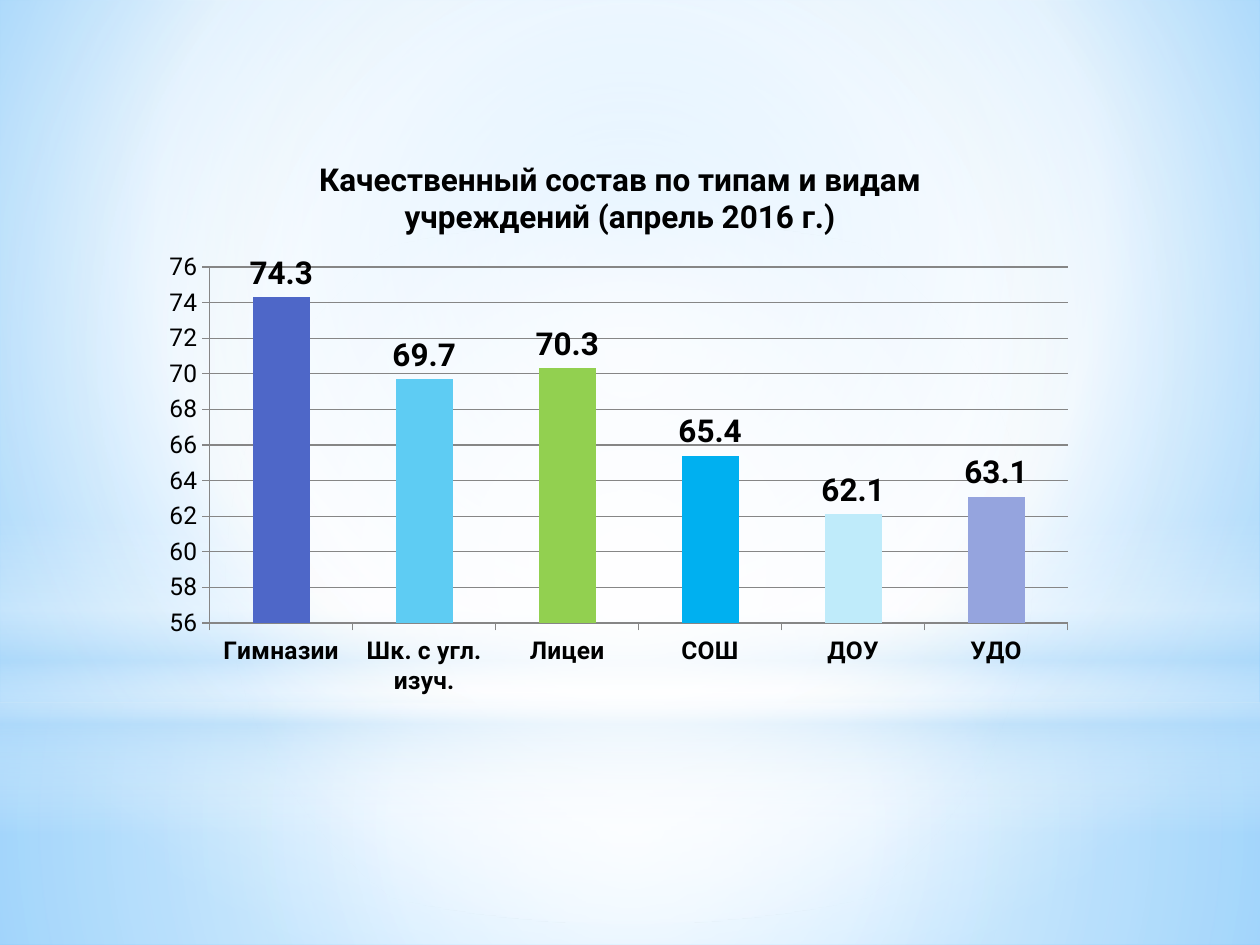
from lxml import etree
from pptx import Presentation
from pptx.chart.data import CategoryChartData
from pptx.dml.color import RGBColor
from pptx.enum.chart import XL_CHART_TYPE, XL_LABEL_POSITION, XL_TICK_MARK
from pptx.enum.shapes import MSO_SHAPE
from pptx.oxml import parse_xml
from pptx.oxml.ns import nsdecls, qn
from pptx.util import Cm, Pt

BLACK = RGBColor(0x00, 0x00, 0x00)
GRAY = RGBColor(0x86, 0x86, 0x86)
WHITE = RGBColor(0xFF, 0xFF, 0xFF)
PALE_BLUE = RGBColor(0xB4, 0xDC, 0xFA)
LIGHT_SKY = RGBColor(0x9E, 0xD5, 0xFF)
SKY = RGBColor(0x5B, 0xB9, 0xFF)
INDIGO = RGBColor(0x4E, 0x67, 0xC8)
CYAN = RGBColor(0x5E, 0xCC, 0xF3)
GREEN = RGBColor(0x92, 0xD0, 0x50)
AZURE = RGBColor(0x00, 0xB0, 0xF0)
ICE = RGBColor(0xBF, 0xEB, 0xFA)
LAVENDER = RGBColor(0x95, 0xA4, 0xDE)
FONT = "Roboto"


def apply_gradient(properties, stops, center=None):
    """Replace a solid fill by stops of (position, colour, opacity) in percent.

    center gives the left, top, right and bottom insets of a circular
    gradient; without it the gradient runs from top to bottom.
    """
    gradient = parse_xml(f'<a:gradFill {nsdecls("a")} rotWithShape="1"><a:gsLst/></a:gradFill>')
    for position, color, opacity in stops:
        stop = etree.SubElement(gradient[0], qn("a:gs"), pos=str(position * 1000))
        rgb = etree.SubElement(stop, qn("a:srgbClr"), val=str(color))
        if opacity < 100:
            etree.SubElement(rgb, qn("a:alpha"), val=str(opacity * 1000))
    if center:
        circle = etree.SubElement(gradient, qn("a:path"), path="circle")
        insets = {side: str(inset * 1000) for side, inset in zip("ltrb", center)}
        etree.SubElement(circle, qn("a:fillToRect"), **insets)
    else:
        etree.SubElement(gradient, qn("a:lin"), ang="5400000", scaled="0")
    properties.replace(properties.find(qn("a:solidFill")), gradient)


def set_font(font, size, bold):
    font.name = FONT
    font.size = Pt(size)
    font.bold = bold
    font.color.rgb = BLACK


presentation = Presentation()
presentation.slide_width = Cm(25.4)
presentation.slide_height = Cm(19.05)
slide = presentation.slides.add_slide(presentation.slide_layouts[6])

# Background and its layers of light
slide.background.fill.solid()
apply_gradient(
    slide.element.find(".//" + qn("p:bgPr")),
    [(0, LIGHT_SKY, 100), (60, WHITE, 100), (100, SKY, 100)],
    (20, 10, 20, 60),
)

MIDDLE = (50, 50, 50, 50)
light_layers = [
    (MSO_SHAPE.RECTANGLE, 14.17, 4.88, MIDDLE,
     [(0, WHITE, 91), (37, WHITE, 76), (100, PALE_BLUE, 79)]),
    (MSO_SHAPE.RECTANGLE, 0, 14.17, MIDDLE,
     [(0, WHITE, 89), (48, WHITE, 62), (100, PALE_BLUE, 79)]),
    (MSO_SHAPE.RECTANGLE, 10.46, 6.35, None,
     [(0, WHITE, 0), (29, WHITE, 30), (45, PALE_BLUE, 40),
      (55, WHITE, 26), (65, PALE_BLUE, 60), (100, WHITE, 0)]),
    (MSO_SHAPE.OVAL, 4.45, 14.17, MIDDLE,
     [(0, WHITE, 100), (56, WHITE, 0)]),
]
for outline, top, height, center, stops in light_layers:
    layer = slide.shapes.add_shape(outline, 0, Cm(top), Cm(25.4), Cm(height))
    layer.shadow.inherit = False
    layer.line.fill.background()
    layer.fill.solid()
    apply_gradient(layer.element.spPr, stops, center)

# Chart
institutions = [
    ("Гимназии", 74.3, INDIGO),
    ("Шк. с угл. изуч.", 69.7, CYAN),
    ("Лицеи", 70.3, GREEN),
    ("СОШ", 65.4, AZURE),
    ("ДОУ", 62.1, ICE),
    ("УДО", 63.1, LAVENDER),
]
names, shares, colors = zip(*institutions)
staff_data = CategoryChartData(number_format="0.0")
staff_data.categories = names
staff_data.add_series("Series 1", shares)
chart = slide.shapes.add_chart(
    XL_CHART_TYPE.COLUMN_CLUSTERED, Cm(3.1), Cm(2.72), Cm(18.8), Cm(11.58), staff_data
).chart
set_font(chart.font, 10, False)
chart.has_legend = False

chart.has_title = True
title = chart.chart_title
title.include_in_layout = False
title.text_frame.text = "Качественный состав по типам и видам учреждений (апрель 2016 г.)"
set_font(title.text_frame.paragraphs[0].runs[0].font, 18, True)

for axis, bold in ((chart.category_axis, True), (chart.value_axis, False)):
    set_font(axis.tick_labels.font, 14, bold)
    axis.major_tick_mark = XL_TICK_MARK.OUTSIDE
    axis.minor_tick_mark = XL_TICK_MARK.NONE
    axis.format.line.color.rgb = GRAY
    axis.format.line.width = Pt(0.75)
scale = chart.value_axis
scale.minimum_scale = 56
scale.maximum_scale = 76
scale.major_unit = 2
scale.tick_labels.number_format = "General"
scale.tick_labels.number_format_is_linked = False
scale.has_major_gridlines = True
scale.major_gridlines.format.line.color.rgb = GRAY
scale.major_gridlines.format.line.width = Pt(0.75)

columns = chart.plots[0]
columns.gap_width = 150
columns.vary_by_categories = False
columns.has_data_labels = True
labels = columns.data_labels
labels.show_value = True
labels.position = XL_LABEL_POSITION.OUTSIDE_END
labels.number_format = "0.0"
labels.number_format_is_linked = False
set_font(labels.font, 18, True)

share_series = columns.series[0]
share_series.format.fill.solid()
share_series.format.fill.fore_color.rgb = INDIGO
for index, color in enumerate(colors[1:], start=1):
    column_fill = share_series.points[index].format.fill
    column_fill.solid()
    column_fill.fore_color.rgb = color

# Fixed inner plot area, as fractions of the chart
plot_area = chart.element.find(".//" + qn("c:plotArea"))
for old_layout in plot_area.findall(qn("c:layout")):
    plot_area.remove(old_layout)
plot_area.insert(0, parse_xml(
    f'<c:layout {nsdecls("c")}><c:manualLayout><c:layoutTarget val="inner"/>'
    '<c:xMode val="edge"/><c:yMode val="edge"/><c:x val="0.06"/><c:y val="0.23"/>'
    '<c:w val="0.92"/><c:h val="0.62"/></c:manualLayout></c:layout>'
))

presentation.save("out.pptx")
